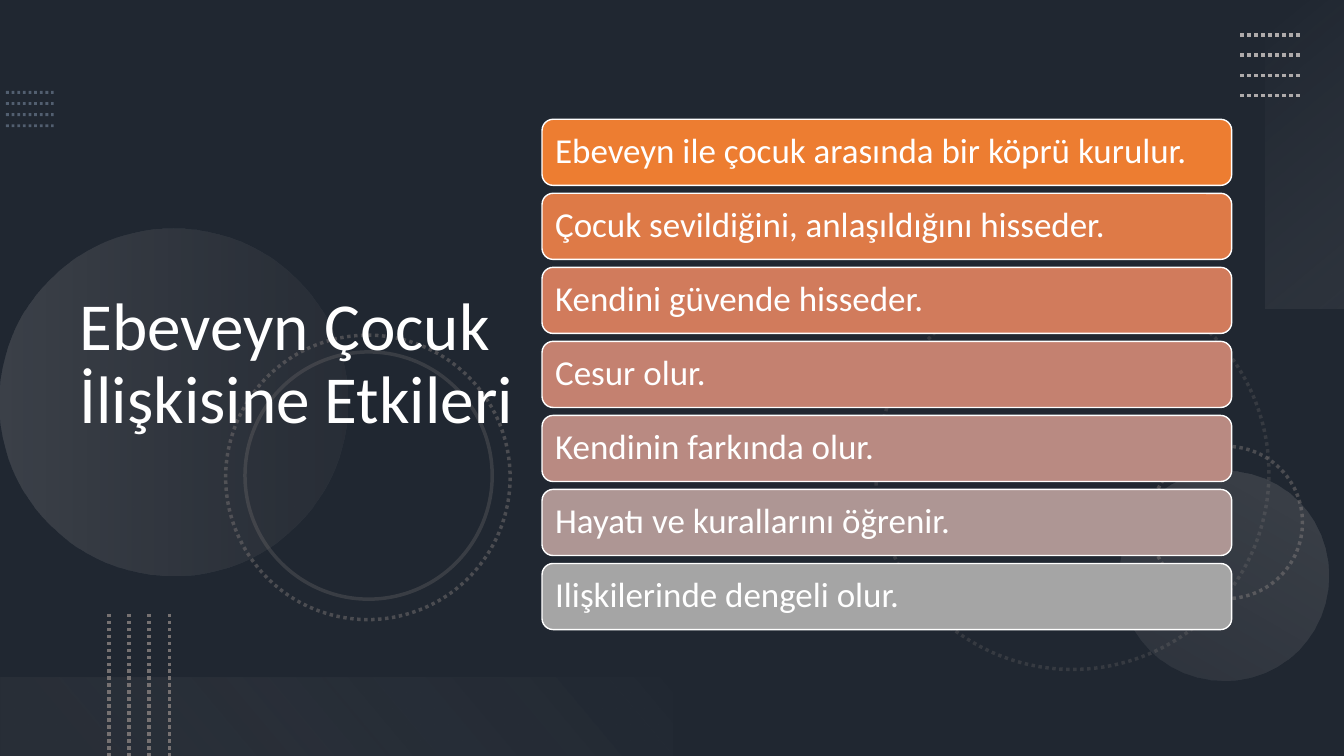
"""Build a dark slide with a title and seven graded cards."""
from lxml.etree import SubElement
from pptx import Presentation
from pptx.dml.color import RGBColor
from pptx.enum.dml import MSO_LINE
from pptx.enum.shapes import MSO_CONNECTOR, MSO_SHAPE
from pptx.enum.text import MSO_ANCHOR, PP_ALIGN
from pptx.oxml.ns import qn
from pptx.util import Pt

WHITE = RGBColor(0xFF, 0xFF, 0xFF)
BLACK = RGBColor(0, 0, 0)
SLATE = RGBColor(0x44, 0x54, 0x6A)
BLUE = RGBColor(0x84, 0x97, 0xB0)
GREY = RGBColor(0x76, 0x71, 0x71)
SILVER = RGBColor(0xAF, 0xAB, 0xAB)
PALE = RGBColor(0xF5, 0xF5, 0xF5)
CREAM = RGBColor(0xF1, 0xF0, 0xF0)

CARDS = [
    ("Ebeveyn ile çocuk arasında bir köprü kurulur.", RGBColor(0xED, 0x7D, 0x31)),
    ("Çocuk sevildiğini, anlaşıldığını hisseder.", RGBColor(0xDE, 0x7A, 0x47)),
    ("Kendini güvende hisseder.", RGBColor(0xD1, 0x7B, 0x5C)),
    ("Cesur olur.", RGBColor(0xC4, 0x81, 0x70)),
    ("Kendinin farkında olur.", RGBColor(0xB9, 0x8A, 0x82)),
    ("Hayatı ve kurallarını öğrenir.", RGBColor(0xAE, 0x96, 0x94)),
    ("Ilişkilerinde dengeli olur.", RGBColor(0xA5, 0xA5, 0xA5)),
]


def fade(shape, alpha):
    for tint in shape._element.spPr.iter(qn("a:srgbClr")):
        SubElement(tint, qn("a:alpha"), val=str(alpha * 1000))


def blend(shape, stops, angle):
    shape.fill.background()
    blank = shape._element.spPr.find(qn("a:noFill"))
    grad = blank.makeelement(qn("a:gradFill"), {"rotWithShape": "1"})
    items = SubElement(grad, qn("a:gsLst"))
    for place, tint, alpha in stops:
        stop = SubElement(items, qn("a:gs"), pos=str(place * 1000))
        color = SubElement(stop, qn("a:srgbClr"), val=str(tint))
        SubElement(color, qn("a:alpha"), val=str(alpha * 1000))
    SubElement(grad, qn("a:lin"), ang=str(angle * 60000), scaled="0")
    blank.getparent().replace(blank, grad)


deck = Presentation()
deck.slide_width, deck.slide_height = Pt(960), Pt(540)
slide = deck.slides.add_slide(deck.slide_layouts[5])
slide.background.fill.solid()
slide.background.fill.fore_color.rgb = SLATE
shapes = slide.shapes

veil = shapes.add_shape(MSO_SHAPE.RECTANGLE, 0, 0, Pt(960), Pt(540))
veil.shadow.inherit = False
veil.fill.solid()
veil.fill.fore_color.rgb = BLACK
veil.line.fill.background()
fade(veil, 53)

ROUNDS = [
    (625.6, 197.4, 280.8, MSO_LINE.ROUND_DOT, 25),
    (821.6, 318.8, 108.8, MSO_LINE.ROUND_DOT, 50),
    (0, 163.2, 248, 270, (20, SILVER, 10, GREY)),
    (799.4, 336.4, 149.8, 210, (10, SILVER, 20, SILVER)),
    (161.2, 239.4, 203.2, MSO_LINE.ROUND_DOT, 50),
    (175, 251.4, 176.6, MSO_LINE.SOLID, 30),
]
for left, top, size, style, tone in ROUNDS:
    disc = shapes.add_shape(MSO_SHAPE.OVAL, Pt(left), Pt(top), Pt(size), Pt(size))
    disc.shadow.inherit = False
    if isinstance(tone, tuple):
        disc.rotation = style
        disc.line.fill.background()
        blend(disc, [(0, tone[1], tone[0]), (100, tone[3], tone[2])], 90)
    else:
        disc.fill.background()
        disc.line.color.rgb = GREY
        disc.line.width = Pt(2.5)
        disc.line.dash_style = style
        fade(disc, tone)

BANDS = [
    (822.2, 82.1, 220.3, 270, [(0, PALE, 0), (100, SILVER, 10)]),
    (0, 483.8, 480.2, 180, [(10, GREY, 10), (100, CREAM, 0)]),
]
for left, top, width, turn, stops in BANDS:
    band = shapes.add_shape(MSO_SHAPE.RECTANGLE, Pt(left), Pt(top), Pt(width), Pt(56.2))
    band.shadow.inherit = False
    band.rotation = turn
    band.line.fill.background()
    blend(band, stops, 140)

DOTS = [
    (4.3, 66, 34, 0, 0, 7.95, BLUE, 2, 50),
    (886, 25, 43, 0, 0, 14.4, SILVER, 2.5, 100),
    (77.7, 438.3, 0, 101.7, 14.4, 0, GREY, 2.5, 100),
]
for left, top, width, height, right, down, tint, weight, alpha in DOTS:
    for i in range(4):
        x, y = left + i * right, top + i * down
        row = shapes.add_connector(
            MSO_CONNECTOR.STRAIGHT, Pt(x), Pt(y), Pt(x + width), Pt(y + height))
        row.line.color.rgb = tint
        row.line.width = Pt(weight)
        row.line.dash_style = MSO_LINE.ROUND_DOT
        SubElement(row._element.spPr, qn("a:effectLst"))
        if alpha < 100:
            fade(row, alpha)

title = shapes.title
title.left, title.top, title.width, title.height = Pt(49.7), Pt(38.9), Pt(330.5), Pt(444.2)
shapes._spTree.append(title._element)
title.text_frame.text = "Ebeveyn Çocuk İlişkisine Etkileri"
title.text_frame.word_wrap = True
title.text_frame.vertical_anchor = MSO_ANCHOR.MIDDLE
head = title.text_frame.paragraphs[0]
head.alignment = PP_ALIGN.LEFT
head.line_spacing = 0.9
head.runs[0].font.size = Pt(48)
head.runs[0].font.name = "Calibri"
head.runs[0].font.color.rgb = WHITE

for i, (words, tint) in enumerate(CARDS):
    card = shapes.add_shape(
        MSO_SHAPE.ROUNDED_RECTANGLE, Pt(387.2), Pt(85.2 + i * 52.88), Pt(492.6), Pt(47.2))
    card.shadow.inherit = False
    card.fill.solid()
    card.fill.fore_color.rgb = tint
    card.line.color.rgb = WHITE
    card.line.width = Pt(1)
    frame = card.text_frame
    frame.text = words
    frame.word_wrap = True
    frame.vertical_anchor = MSO_ANCHOR.MIDDLE
    frame.margin_left = frame.margin_right = Pt(7.2)
    frame.margin_top = frame.margin_bottom = Pt(7.2)
    line = frame.paragraphs[0]
    line.alignment = PP_ALIGN.LEFT
    line.line_spacing = 0.9
    line.runs[0].font.size = Pt(25)
    line.runs[0].font.name = "Calibri"
    line.runs[0].font.color.rgb = WHITE

deck.save("out.pptx")
